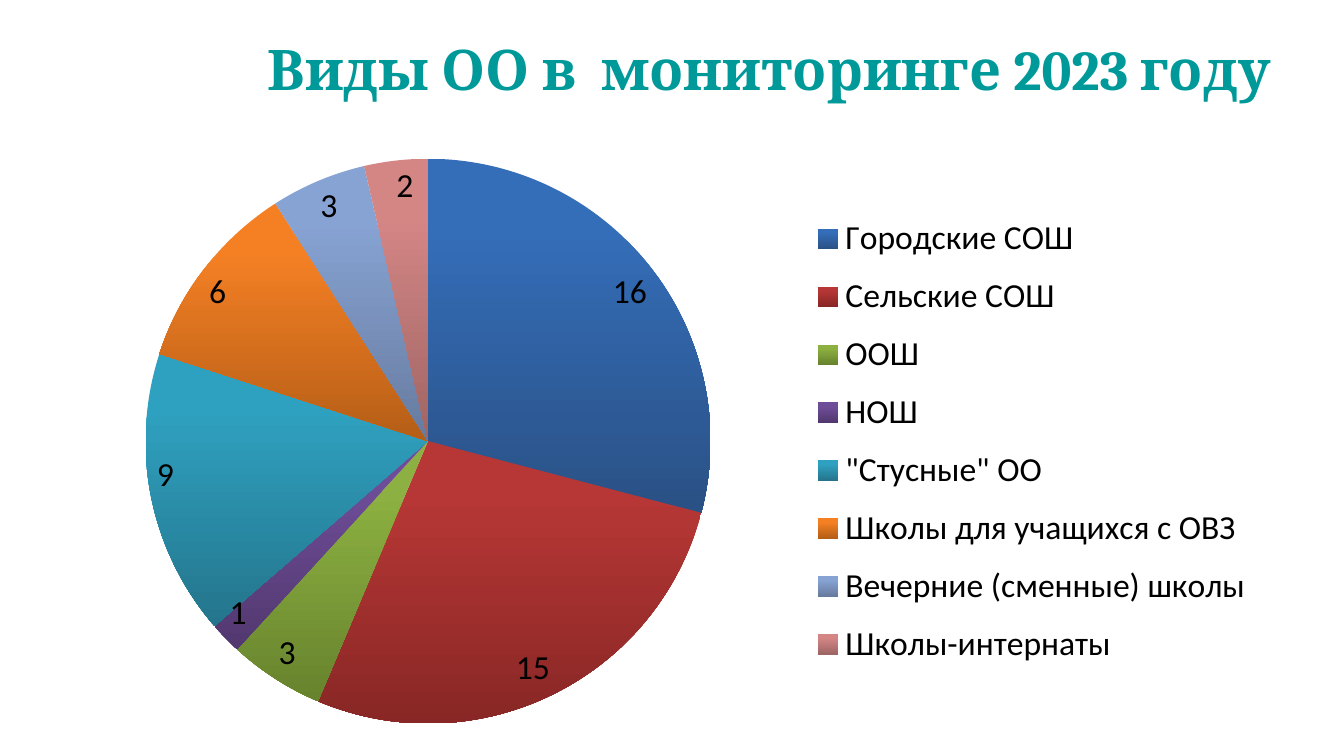
from dataclasses import dataclass

from lxml import etree
from pptx import Presentation
from pptx.chart.chart import Chart
from pptx.chart.data import CategoryChartData
from pptx.dml.color import RGBColor
from pptx.enum.chart import XL_CHART_TYPE as ChartType
from pptx.enum.chart import XL_LABEL_POSITION as LabelPosition
from pptx.enum.chart import XL_LEGEND_POSITION as LegendPosition
from pptx.enum.text import PP_ALIGN as Align
from pptx.oxml.ns import qn
from pptx.slide import Slide
from pptx.util import Inches, Pt


@dataclass
class Sector:
    label: str
    schools: int
    top_color: str
    bottom_color: str


SECTORS = [
    Sector("Городские СОШ", 16, "346DB8", "2A5185"),
    Sector("Сельские СОШ", 15, "B63735", "882725"),
    Sector("ООШ", 3, "8CB041", "67832D"),
    Sector("НОШ", 1, "6E4D98", "52386F"),
    Sector('"Стусные" ОО', 9, "2FA1C0", "24758C"),
    Sector("Школы для учащихся с ОВЗ", 6, "F58024", "B55E17"),
    Sector("Вечерние (сменные) школы", 3, "87A3D3", "677B9F"),
    Sector("Школы-интернаты", 2, "D48685", "9E6564"),
]


def rgb(color: str) -> RGBColor:
    return RGBColor.from_string(color)


def make_layout(inner: bool, x: float, y: float, w: float, h: float) -> etree.Element:
    """Manual layout in fractions of the chart area."""
    layout = etree.Element(qn("c:layout"))
    manual = etree.SubElement(layout, qn("c:manualLayout"))
    settings = {"xMode": "edge", "yMode": "edge", "x": x, "y": y, "w": w, "h": h}
    if inner:
        settings = {"layoutTarget": "inner", **settings}
    for name, value in settings.items():
        etree.SubElement(manual, qn(f"c:{name}")).set("val", str(value))
    return layout


def place_chart_parts(chart: Chart) -> None:
    plot_area = chart.element.find(".//" + qn("c:plotArea"))
    for old_layout in plot_area.findall(qn("c:layout")):
        plot_area.remove(old_layout)
    plot_area.insert(0, make_layout(True, 0.093, 0.023, 0.45, 0.953))

    legend = chart.element.find(".//" + qn("c:legend"))
    for old_layout in legend.findall(qn("c:layout")):
        legend.remove(old_layout)
    legend.find(qn("c:legendPos")).addnext(make_layout(False, 0.618, 0.095, 0.36, 0.81))


def add_title(page: Slide, text: str) -> None:
    box = page.shapes.add_textbox(Inches(2.03), Inches(0.29), Inches(11.2), Inches(0.8))
    box.text_frame.word_wrap = True
    box.text_frame.text = text
    paragraph = box.text_frame.paragraphs[0]
    paragraph.alignment = Align.CENTER
    font = paragraph.runs[0].font
    font.name, font.size, font.bold = "Cambria", Pt(40), True
    font.color.rgb = rgb("009999")


def add_pie(page: Slide, sectors: list[Sector]) -> None:
    data = CategoryChartData(number_format="0")
    data.categories = [sector.label for sector in sectors]
    data.add_series("Series 1", [sector.schools for sector in sectors])
    chart = page.shapes.add_chart(
        ChartType.PIE, Inches(0.28), Inches(1.44), Inches(12.47), Inches(5.88), data
    ).chart
    chart.has_title = False
    chart.font.name, chart.font.size = "Calibri", Pt(24)
    chart.font.color.rgb = rgb("000000")

    # Legend
    chart.has_legend = True
    chart.legend.position = LegendPosition.RIGHT
    chart.legend.include_in_layout = False

    # Value labels
    plot = chart.plots[0]
    plot.vary_by_categories = True
    plot.has_data_labels = True
    labels = plot.data_labels
    labels.show_value, labels.show_percentage = True, False
    labels.number_format, labels.number_format_is_linked = "0", False
    labels.position = LabelPosition.INSIDE_END

    # Sector shading from top to bottom
    for index, sector in enumerate(sectors):
        fill = plot.series[0].points[index].format.fill
        fill.gradient()
        fill.gradient_angle = 270
        top, bottom = fill.gradient_stops
        top.color.rgb, top.position = rgb(sector.top_color), 0.2
        bottom.color.rgb, bottom.position = rgb(sector.bottom_color), 1.0

    place_chart_parts(chart)


def main() -> None:
    deck = Presentation()
    deck.slide_width, deck.slide_height = Inches(13.33), Inches(7.5)
    page = deck.slides.add_slide(deck.slide_layouts[6])
    add_pie(page, SECTORS)
    add_title(page, "Виды ОО в  мониторинге 2023 году")
    deck.save("out.pptx")


if __name__ == "__main__":
    main()
